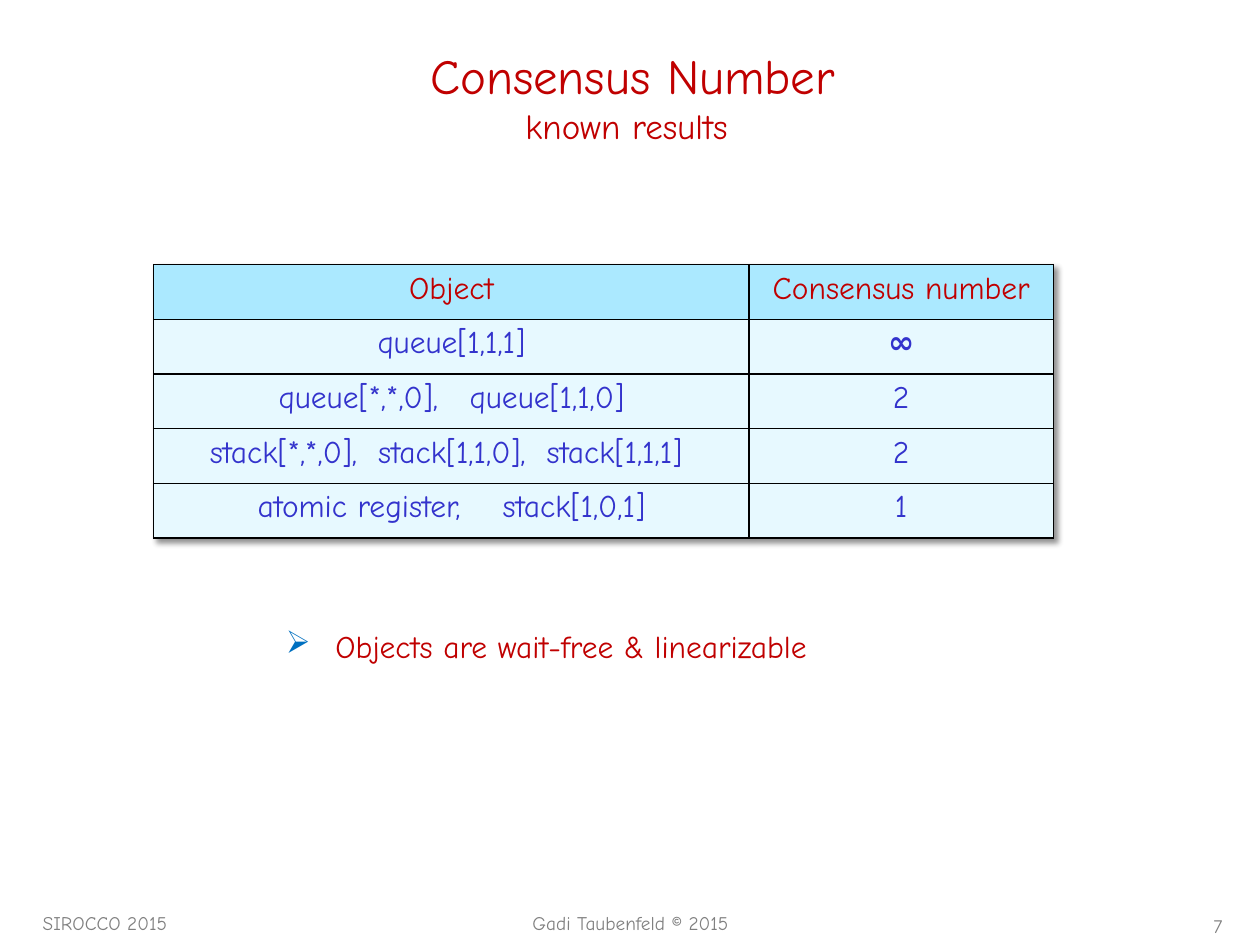
from dataclasses import dataclass

from lxml.etree import SubElement
from pptx import Presentation
from pptx.dml.color import RGBColor
from pptx.enum.text import MSO_ANCHOR as Anchor, PP_ALIGN as Align
from pptx.oxml import parse_xml
from pptx.oxml.ns import nsdecls, qn
from pptx.util import Inches, Pt

FONT = "Comic Neue"
RED, BLUE, INDIGO, GREY = "C00000", "0070C0", "3333CC", "808080"
HEADER_FILL, BODY_FILL, BORDER = "ABE9FF", "E7F9FF", "000000"
PAGE_WIDTH, PAGE_HEIGHT = Inches(10), Inches(7.5)
COLUMN, ROW = PAGE_WIDTH / 100, PAGE_HEIGHT / 100


@dataclass(frozen=True)
class Span:
    """A run of text; a break may follow it."""
    text: str
    size: int
    color: str
    bold: bool = False
    shadow: bool = False
    line_break: bool = False


@dataclass(frozen=True)
class Area:
    """A rectangle in columns and rows of the page grid."""
    left: float
    top: float
    width: float
    height: float

    def frame(self) -> list[int]:
        """Return left, top, width and height as lengths."""
        units = (COLUMN, ROW, COLUMN, ROW)
        values = (self.left, self.top, self.width, self.height)
        return [round(value * unit) for value, unit in zip(values, units)]


@dataclass(frozen=True)
class TextItem:
    """A one-paragraph text box."""
    area: Area
    spans: tuple[Span, ...]
    align: Align = Align.LEFT
    anchor: Anchor = Anchor.TOP
    bullet: str = ""


TEXTS = (
    TextItem(Area(93.3, 96.13, 4.7, 3.87), (Span("7", 11, GREY),), Align.RIGHT),
    TextItem(Area(21.7, 65.73, 54.3, 5.33),
             (Span(" ", 18, BLUE, shadow=True),
              Span("Objects are wait-free & linearizable", 18, RED, shadow=True)),
             bullet="➢"),
    TextItem(Area(2.7, 2.8, 95, 14.67),
             (Span("Consensus Number", 28, RED, shadow=True, line_break=True),
              Span("known results ", 20, RED, shadow=True)),
             Align.CENTER, Anchor.MIDDLE),
    TextItem(Area(2.4, 95.73, 20.8, 3.6), (Span("SIROCCO 2015", 11, GREY),)),
    TextItem(Area(39.8, 95.73, 20.5, 3.6),
             (Span("Gadi Taubenfeld © 2015", 11, GREY),), Align.CENTER),
)
TABLE_AREA = Area(12.2, 28, 71.4, 28.93)
TABLE_COLUMNS = (47.25, 24.15)
RESULTS = (
    ("Object", "Consensus number"),
    ("queue[1,1,1]", "∞"),
    ("queue[*,*,0],   queue[1,1,0]", "2"),
    ("stack[*,*,0],  stack[1,1,0],  stack[1,1,1] ", "2"),
    ("atomic register,    stack[1,0,1]", "1"),
)


def rgb(color: str) -> RGBColor:
    """Turn a hex string into a colour."""
    return RGBColor.from_string(color)


def shadow_effect():
    """Build a soft shadow falling to the lower right."""
    return parse_xml(
        f'<a:effectLst {nsdecls("a")}>'
        '<a:outerShdw blurRad="38100" dist="38100" dir="2700000" algn="tl">'
        '<a:srgbClr val="000000"><a:alpha val="43000"/></a:srgbClr>'
        '</a:outerShdw></a:effectLst>')


def add_span(para, span: Span) -> None:
    """Add one formatted run to a paragraph."""
    run = para.add_run()
    run.text = span.text
    font = run.font
    font.size, font.name, font.bold = Pt(span.size), FONT, span.bold
    font.color.rgb = rgb(span.color)
    if span.shadow:
        run._r.get_or_add_rPr().find(qn("a:solidFill")).addnext(shadow_effect())
    if span.line_break:
        para.add_line_break()


def add_text(page, item: TextItem) -> None:
    """Draw a text box."""
    frame = page.shapes.add_textbox(*item.area.frame()).text_frame
    frame.word_wrap = True
    frame.vertical_anchor = item.anchor
    para = frame.paragraphs[0]
    para.alignment = item.align
    if item.bullet:
        properties = para._p.get_or_add_pPr()
        indent = Inches(0.31)
        properties.set("marL", str(indent))
        properties.set("indent", str(-indent))
        SubElement(properties, qn("a:buChar"), char=item.bullet)
    for span in item.spans:
        add_span(para, span)


def add_borders(cell) -> None:
    """Give a cell a thin line on each side."""
    properties = cell._tc.get_or_add_tcPr()
    for position, side in enumerate(("lnL", "lnR", "lnT", "lnB")):
        properties.insert(position, parse_xml(
            f'<a:{side} {nsdecls("a")} w="{Pt(1)}"><a:solidFill>'
            f'<a:srgbClr val="{BORDER}"/></a:solidFill></a:{side}>'))


def add_results(page) -> None:
    """Draw the table of consensus numbers."""
    table = page.shapes.add_table(
        len(RESULTS), len(TABLE_COLUMNS), *TABLE_AREA.frame()).table
    table._tbl.tblPr.insert(0, shadow_effect())
    for column, width in zip(table.columns, TABLE_COLUMNS):
        column.width = round(width * COLUMN)
    for row_index, texts in enumerate(RESULTS):
        header = row_index == 0
        for column_index, text in enumerate(texts):
            cell = table.cell(row_index, column_index)
            cell.fill.solid()
            cell.fill.fore_color.rgb = rgb(HEADER_FILL if header else BODY_FILL)
            add_borders(cell)
            para = cell.text_frame.paragraphs[0]
            para.alignment = Align.CENTER
            add_span(para, Span(text, 18, RED if header else INDIGO, text == "∞"))


def main() -> None:
    """Build and save the deck."""
    deck = Presentation()
    deck.slide_width, deck.slide_height = PAGE_WIDTH, PAGE_HEIGHT
    page = deck.slides.add_slide(deck.slide_layouts[6])
    add_results(page)
    for item in TEXTS:
        add_text(page, item)
    deck.save("out.pptx")


if __name__ == "__main__":
    main()
